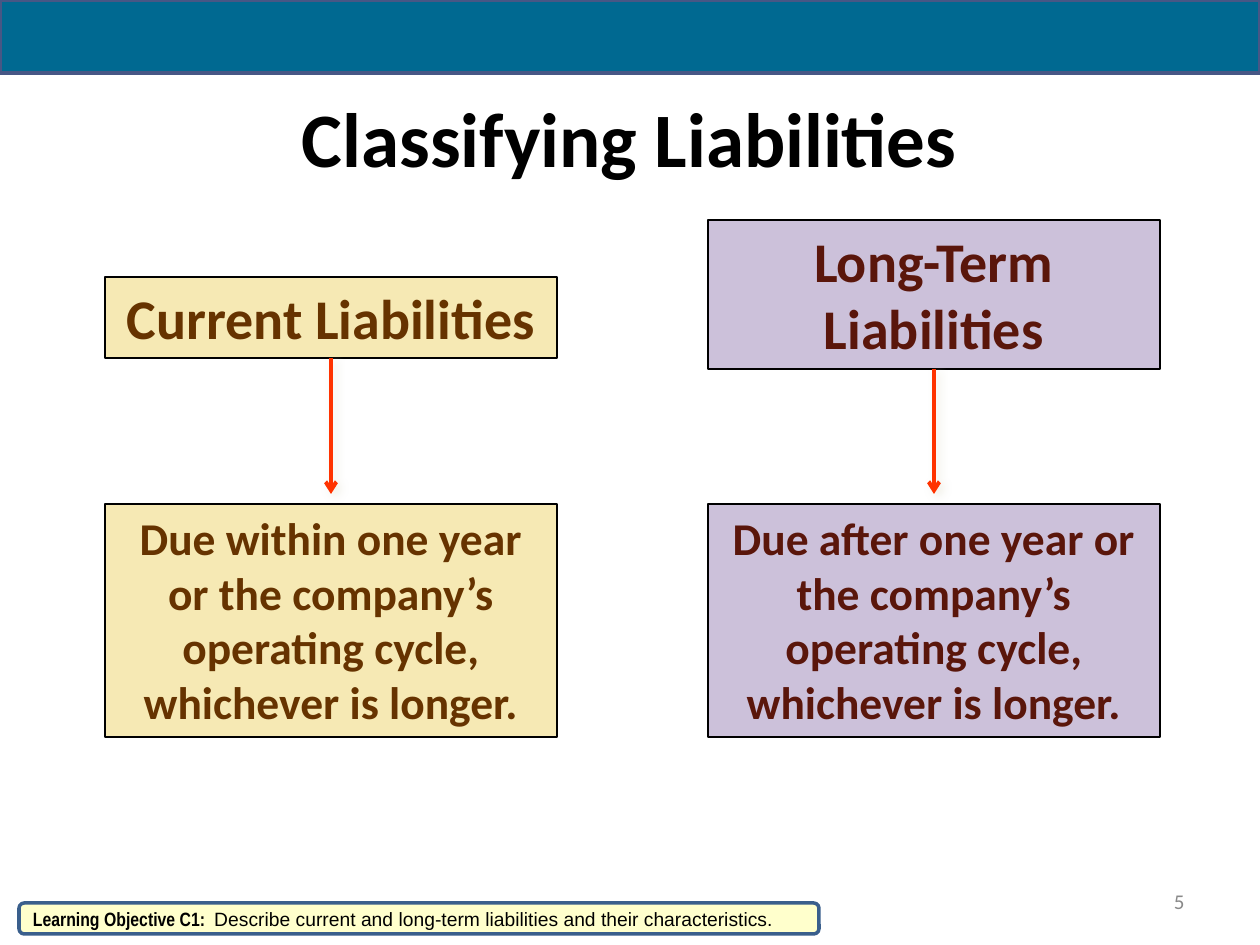
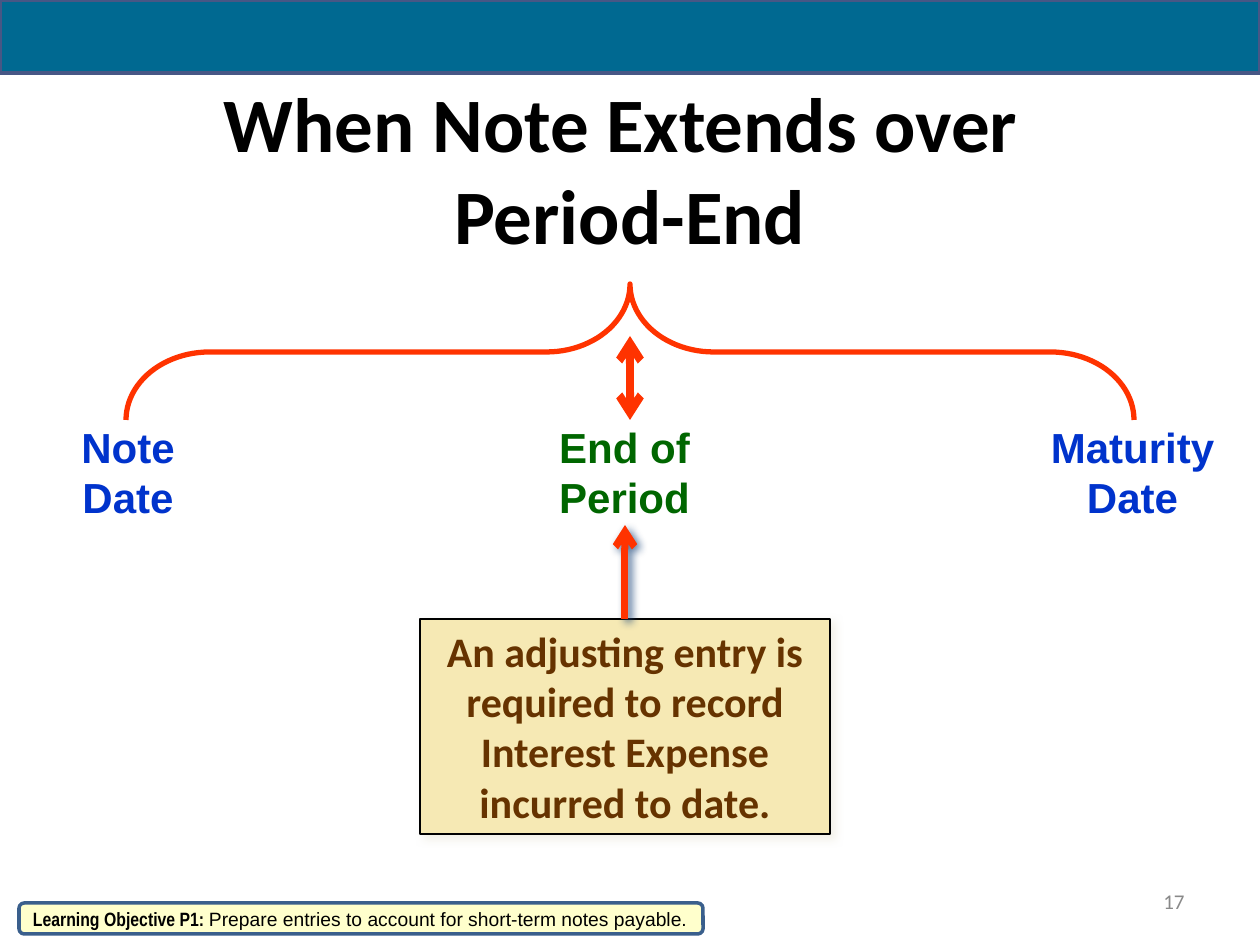
from lxml.etree import SubElement
from pptx import Presentation
from pptx.dml.color import RGBColor
from pptx.enum.shapes import MSO_CONNECTOR, MSO_SHAPE
from pptx.enum.text import MSO_ANCHOR, PP_ALIGN
from pptx.oxml.ns import qn
from pptx.util import Emu, Pt

PX_PER_INCH = 126
PAGE_WIDTH, PAGE_HEIGHT = 1260, 945
BAND_HEIGHT = 73
TOP, BOTTOM = 0, 2  # connection sites of a rectangle

RED, BLACK, BROWN, MAROON = "FF3300", "000000", "663300", "5A160B"
BLUE, GREEN = "0033CC", "006600"
CREAM, LILAC = "F6E9B4", "CCC1DA"
PALE_SHADOW, NAVY_SHADOW = "EEECE1", "1F497D"

TITLE = {"name": "Calibri", "size": Pt(44), "bold": True}
HEADING = {"name": "Calibri", "size": Pt(32), "bold": True}
DETAIL = {"name": "Calibri", "size": Pt(26), "bold": True}
NOTE = {"name": "Calibri", "size": Pt(24), "bold": True}
LABEL = {"name": "Arial", "size": Pt(24), "bold": True}
NUMBER = {"name": "Calibri", "size": Pt(12), "bold": False}
OBJECTIVE_CODE = {"name": "Arial Narrow", "size": Pt(11), "bold": True}
OBJECTIVE = {"name": "Arial", "size": Pt(11), "bold": False}


def px(length):
    return Emu(round(length * 914400 / PX_PER_INCH))


def color(value):
    return RGBColor.from_string(value)


def set_shadow(shape, shade=None):
    """Give a finished shape a soft shadow, or none at all."""
    effects = SubElement(shape._element.spPr, qn("a:effectLst"))
    if shade:
        shadow = SubElement(effects, qn("a:outerShdw"), blurRad=str(Pt(5)), dist=str(Pt(3)),
                            dir="2700000", algn="tl", rotWithShape="0")
        tone = SubElement(shadow, qn("a:srgbClr"), val=shade)
        SubElement(tone, qn("a:alpha"), val="75000")


class Deck:
    """The deck's style and the page being drawn."""

    def __init__(self):
        self.deck = Presentation()
        self.deck.slide_width, self.deck.slide_height = px(PAGE_WIDTH), px(PAGE_HEIGHT)
        self.page = None

    def add_page(self, title, title_area, number, code, objective, objective_width):
        """Start a page with its title, band, number and learning objective."""
        self.page = self.deck.slides.add_slide(self.deck.slide_layouts[5])
        holder = self.page.shapes.title
        holder.left, holder.top, holder.width, holder.height = map(px, title_area)
        holder.text_frame.vertical_anchor = MSO_ANCHOR.MIDDLE
        holder.text_frame.text = title
        para = holder.text_frame.paragraphs[0]
        para.alignment = PP_ALIGN.CENTER
        for span in para.runs:
            self.style(span, TITLE, BLACK)
        self.box((0, 0, PAGE_WIDTH, BAND_HEIGHT), "006991", "475785", 2.25)
        self.text((903, 876, 294, 50), [(str(number), NUMBER, "898989")], PP_ALIGN.RIGHT,
                  MSO_ANCHOR.MIDDLE)
        bar = self.box((19, 903, objective_width, 31), "FFFFCC", "3A5F8C", 2,
                       kind=MSO_SHAPE.ROUNDED_RECTANGLE)
        self.put_text(bar, [(code, OBJECTIVE_CODE, BLACK), (objective, OBJECTIVE, BLACK)],
                      PP_ALIGN.LEFT, MSO_ANCHOR.MIDDLE)

    def style(self, span, formats, shade):
        for name, value in formats.items():
            setattr(span.font, name, value)
        span.font.color.rgb = color(shade)

    def put_text(self, shape, spans, alignment=PP_ALIGN.CENTER, anchor=MSO_ANCHOR.TOP):
        frame = shape.text_frame
        frame.word_wrap = True
        frame.vertical_anchor = anchor
        para = frame.paragraphs[0]
        para.alignment = alignment
        for words, formats, shade in spans:
            span = para.add_run()
            span.text = words
            self.style(span, formats, shade)

    def text(self, area, spans, alignment=PP_ALIGN.CENTER, anchor=MSO_ANCHOR.TOP):
        self.put_text(self.page.shapes.add_textbox(*map(px, area)), spans, alignment, anchor)

    def box(self, area, fill, line=BLACK, weight=1, shadow=None, kind=MSO_SHAPE.RECTANGLE):
        box = self.page.shapes.add_shape(kind, *map(px, area))
        if fill:
            box.fill.solid()
            box.fill.fore_color.rgb = color(fill)
        else:
            box.fill.background()
        box.line.color.rgb = color(line)
        box.line.width = Pt(weight)
        set_shadow(box, shadow)
        return box

    def arrow(self, start, end, weight, ends=("tailEnd",), shadow=None, joint=None):
        """Draw an arrow; joint is the (box, site) where it starts."""
        arrow = self.page.shapes.add_connector(MSO_CONNECTOR.STRAIGHT, *map(px, start + end))
        if joint:
            arrow.begin_connect(*joint)
        arrow.line.color.rgb = color(RED)
        arrow.line.width = Pt(weight)
        for end_name in ends:
            SubElement(arrow._element.spPr.find(qn("a:ln")), qn(f"a:{end_name}"), type="arrow")
        set_shadow(arrow, shadow)

    def brace(self, center_x, top, span, depth, curve):
        """Draw a brace lying flat, its point upwards."""
        area = (center_x - depth // 2, top + depth // 2 - span // 2, depth, span)
        brace = self.box(area, None, RED, 3, kind=MSO_SHAPE.LEFT_BRACE)
        brace.rotation = 90
        brace.adjustments[0] = curve


def classifying_liabilities(deck):
    deck.add_page("Classifying Liabilities", (63, 63, 1134, 147), 5, "Learning Objective C1:  ",
                  "Describe current and long-term liabilities and their characteristics.", 800)
    width, detail_top = 452, 504
    columns = [
        (105, 277, 81, CREAM, BROWN, "Current Liabilities",
         "Due within one year or the company’s operating cycle, whichever is longer."),
        (708, 220, 149, LILAC, MAROON, "Long-Term Liabilities",
         "Due after one year or the company’s operating cycle, whichever is longer."),
    ]
    for left, top, height, fill, ink, heading, detail in columns:
        heading_box = deck.box((left, top, width, height), fill)
        deck.put_text(heading_box, [(heading, HEADING, ink)])
        detail_box = deck.box((left, detail_top, width, 233), fill)
        deck.put_text(detail_box, [(detail, DETAIL, ink)])
        middle = left + width // 2
        deck.arrow((middle, top + height), (middle, detail_top - 10), 2.25,
                   shadow=PALE_SHADOW, joint=(heading_box, BOTTOM))


def note_over_period_end(deck):
    deck.add_page("When Note Extends over \vPeriod-End", (63, 73, 1134, 189), 17,
                  "Learning Objective P1: ",
                  "Prepare entries to account for short-term notes payable.", 684)
    center = PAGE_WIDTH // 2
    deck.arrow((center, 336), (center, 420), 4.5, ends=("headEnd", "tailEnd"))
    for left, width, label, ink in [(49, 158, "Note Date", BLUE),
                                    (533, 183, "End of Period", GREEN),
                                    (1034, 197, "Maturity Date", BLUE)]:
        deck.text((left, 415, width, 113), [(label, LABEL, ink)])
    entry_box = deck.box((420, 619, 410, 215), CREAM, shadow=PALE_SHADOW)
    deck.put_text(entry_box, [("An adjusting entry is required to record Interest Expense "
                               "incurred to date.", NOTE, BROWN)])
    deck.arrow((625, 619), (625, 525), 4, shadow=NAVY_SHADOW, joint=(entry_box, TOP))
    deck.brace(center, 284, 1008, 136, 0.615)


def main():
    deck = Deck()
    classifying_liabilities(deck)
    note_over_period_end(deck)
    deck.deck.save("out.pptx")


if __name__ == "__main__":
    main()
